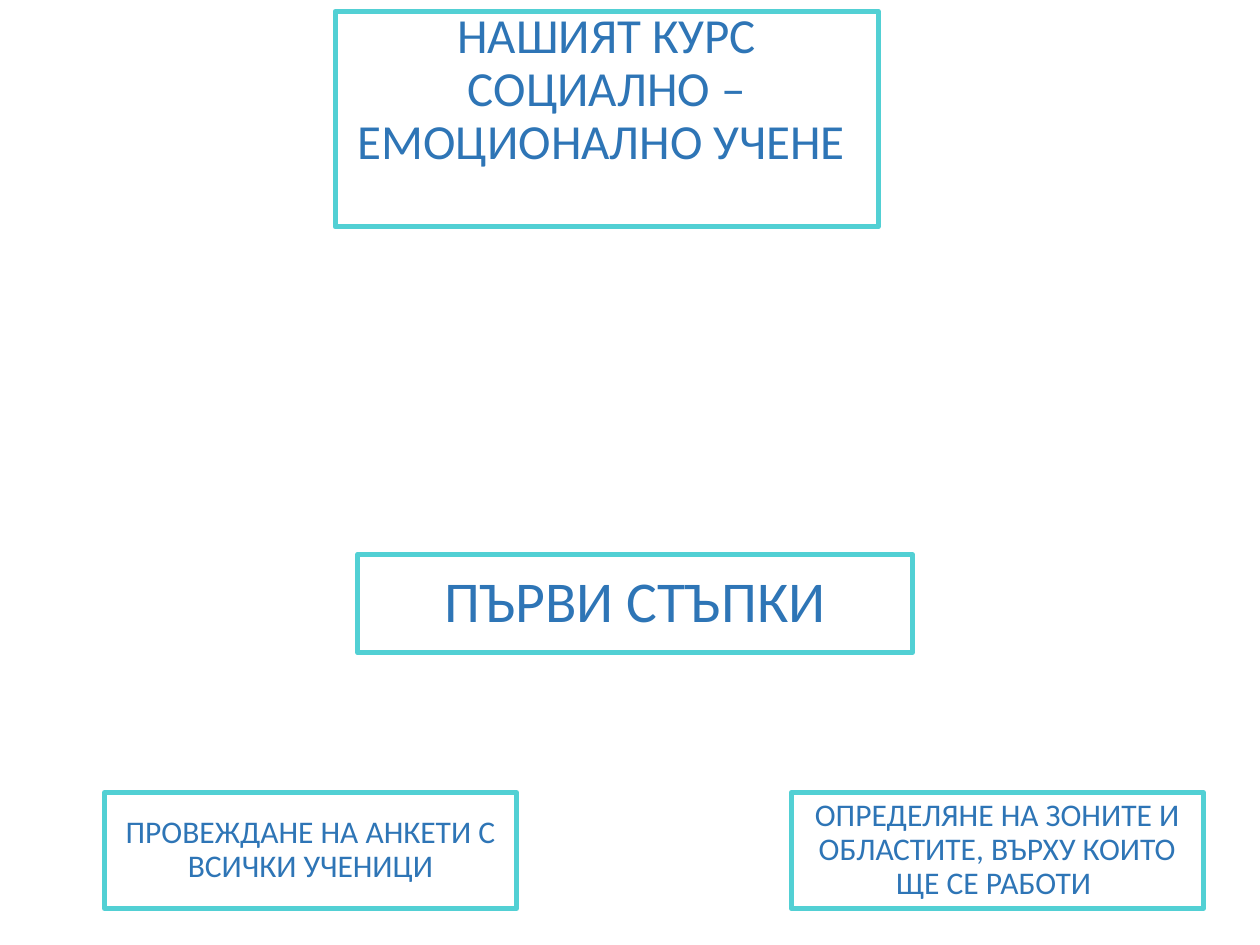
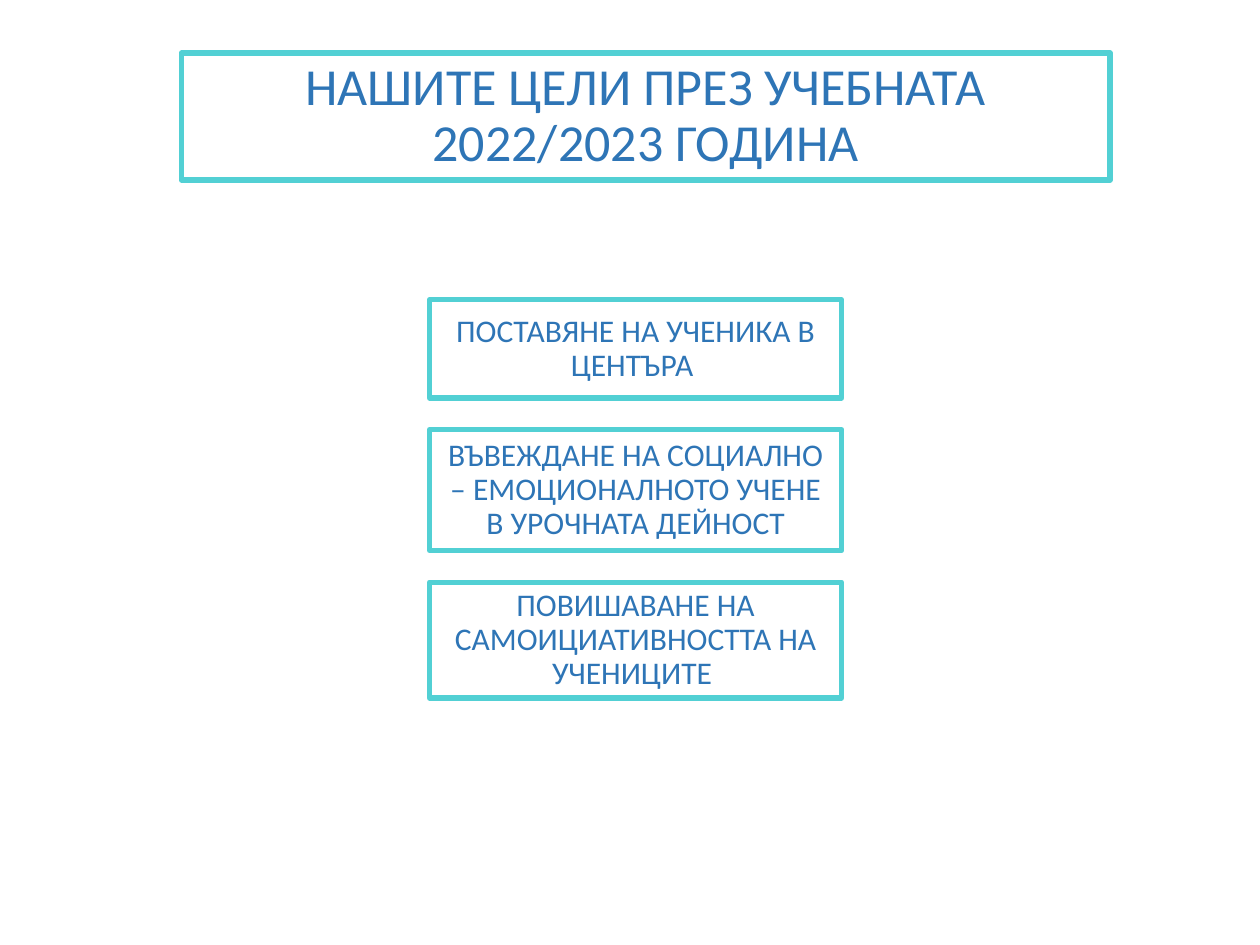
from dataclasses import dataclass

from lxml.etree import SubElement
from pptx import Presentation
from pptx.dml.color import RGBColor
from pptx.enum.shapes import MSO_SHAPE as Shape
from pptx.enum.text import MSO_ANCHOR as Anchor, PP_ALIGN as Align
from pptx.oxml.ns import qn
from pptx.util import Inches, Pt


@dataclass(frozen=True)
class Theme:
    fill: RGBColor = RGBColor.from_string("FFFFFF")
    border: RGBColor = RGBColor.from_string("52D0D4")
    text: RGBColor = RGBColor.from_string("2E75B6")
    font: str = "Calibri"
    course_size: float = 28
    steps_size: float = 33
    goals_size: float = 29.7
    body_size: float = 18
    border_width: float = 3
    line_spacing: float = 0.9


THEME = Theme()

COURSE_TITLE = "НАШИЯТ КУРС\vСОЦИАЛНО – ЕМОЦИОНАЛНО УЧЕНЕ "
STEPS_TITLE = "ПЪРВИ СТЪПКИ"
STEPS = [
    "ПРОВЕЖДАНЕ НА АНКЕТИ С ВСИЧКИ УЧЕНИЦИ",
    "ОПРЕДЕЛЯНЕ НА ЗОНИТЕ И ОБЛАСТИТЕ, ВЪРХУ КОИТО ЩЕ СЕ РАБОТИ ",
]
GOALS_TITLE = "НАШИТЕ ЦЕЛИ ПРЕЗ УЧЕБНАТА 2022/2023 ГОДИНА"
GOALS = [
    ("ПОСТАВЯНЕ НА УЧЕНИКА В ЦЕНТЪРА ", 0.78),
    ("ВЪВЕЖДАНЕ НА СОЦИАЛНО – ЕМОЦИОНАЛНОТО УЧЕНЕ В УРОЧНАТА ДЕЙНОСТ", 0.96),
    ("ПОВИШАВАНЕ НА САМОИЦИАТИВНОСТТА НА УЧЕНИЦИТЕ ", 0.92),
]

CARD_WIDTH = 3.27
STEP_LEFT, STEP_TOP, STEP_HEIGHT, STEP_PITCH = 0.83, 6.29, 0.92, 5.45
GOAL_LEFT, GOAL_TOP, GOAL_GAP = 3.41, 2.38, 0.25


def add_card(slide, text, left, top, width, height, size=THEME.body_size):
    shape = slide.shapes.add_shape(
        Shape.RECTANGLE, Inches(left), Inches(top), Inches(width), Inches(height))
    shape.shadow.inherit = False
    shape.fill.solid()
    shape.fill.fore_color.rgb = THEME.fill
    shape.line.color.rgb = THEME.border
    shape.line.width = Pt(THEME.border_width)
    SubElement(shape.element.spPr.find(qn("a:ln")), qn("a:round"))

    text_frame = shape.text_frame
    text_frame.word_wrap = True
    text_frame.vertical_anchor = Anchor.MIDDLE
    text_frame.text = text
    paragraph = text_frame.paragraphs[0]
    paragraph.alignment = Align.CENTER
    paragraph.line_spacing = THEME.line_spacing
    for run in paragraph.runs:
        run.font.name = THEME.font
        run.font.size = Pt(size)
        run.font.color.rgb = THEME.text
    return shape


def build_course_slide(slide):
    title = add_card(slide, COURSE_TITLE, 2.66, 0.09, 4.31, 1.71, THEME.course_size)
    title.text_frame.vertical_anchor = Anchor.TOP
    title.text_frame.margin_top = 0
    for index, step in enumerate(STEPS):
        add_card(slide, step, STEP_LEFT + index * STEP_PITCH, STEP_TOP,
                 CARD_WIDTH, STEP_HEIGHT)
    add_card(slide, STEPS_TITLE, 2.84, 4.4, 4.4, 0.78, THEME.steps_size)


def build_goals_slide(slide):
    add_card(slide, GOALS_TITLE, 1.44, 0.42, 7.37, 1.01, THEME.goals_size)
    top = GOAL_TOP
    for goal, height in GOALS:
        add_card(slide, goal, GOAL_LEFT, top, CARD_WIDTH, height)
        top += height + GOAL_GAP


def main():
    presentation = Presentation()
    presentation.slide_width = Inches(10)
    presentation.slide_height = Inches(7.5)
    blank = presentation.slide_layouts[6]
    for build in (build_course_slide, build_goals_slide):
        build(presentation.slides.add_slide(blank))
    presentation.save("out.pptx")


if __name__ == "__main__":
    main()
